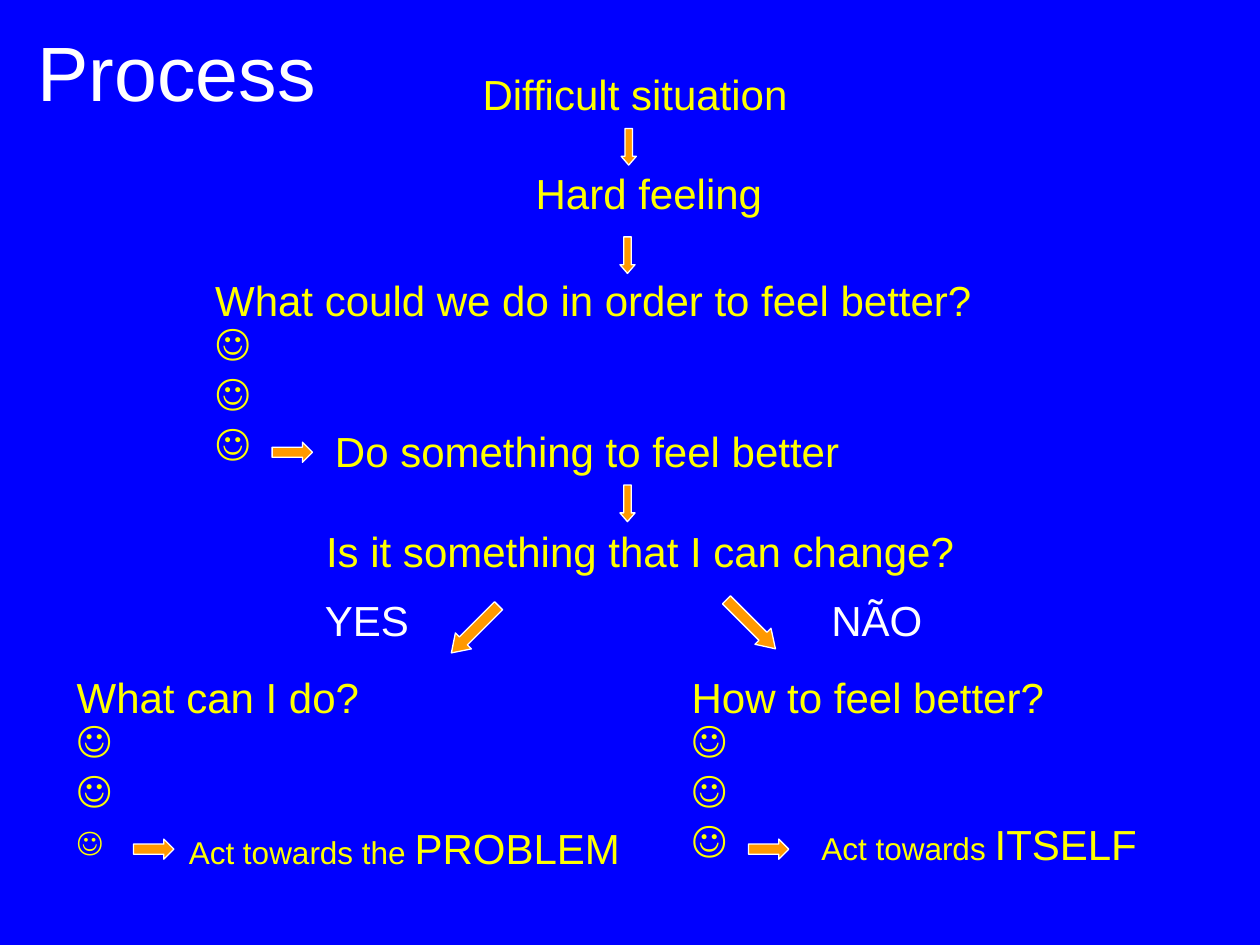
from pptx import Presentation
from pptx.dml.color import RGBColor
from pptx.enum import shapes, text
from pptx.oxml.ns import qn
from pptx.util import Inches, Pt

BLUE, YELLOW, WHITE, ORANGE = "0000FF", "FFFF00", "FFFFFF", "FF9900"
SMILEY = "☺"
LEFT, CENTER = text.PP_ALIGN.LEFT, text.PP_ALIGN.CENTER
DOWN, RIGHT = shapes.MSO_SHAPE.DOWN_ARROW, shapes.MSO_SHAPE.RIGHT_ARROW

LABELS = [
    ("Process", 0.2, 0.21, 9.14, 0.71, LEFT, WHITE, 44),
    ("Difficult situation", 2.33, 0.49, 5.42, 0.5, CENTER, YELLOW, 24),
    ("Hard feeling", 2.16, 1.28, 5.98, 0.5, CENTER, YELLOW, 24),
    ("Do something to feel better", 2.56, 3.33, 7.09, 0.5, LEFT, YELLOW, 24),
    ("Is it something that I can change?", 2.09, 4.12, 5.98, 0.5, CENTER, YELLOW, 24),
    ("YES", 2.48, 4.67, 1.02, 0.5, LEFT, WHITE, 24),
    ("NÃO", 6.5, 4.67, 1.1, 0.5, LEFT, WHITE, 24),
]
QUESTIONS = [
    ("What could we do in order to feel better?", 1.61, 2.13, 7.64, []),
    ("What can I do?", 0.51, 5.28, 4.88, [("Act towards the ", 18), ("PROBLEM", 24)]),
    ("How to feel better?", 5.39, 5.28, 4.09, []),
]
ITSELF = [("Act towards ", 18), ("ITSELF", 24)]
STEP_ARROWS = [(4.93, 1.02), (4.92, 1.88), (4.92, 3.85)]
BRANCH_ARROWS = [(5.87, 4.68, 0.55, 315, 0.78), (3.68, 4.73, 0.53, 45, 0.75)]


def color(value):
    return RGBColor.from_string(value)


def add_box(left, top, width, height):
    box = page.shapes.add_textbox(*map(Inches, (left, top, width, height)))
    box.text_frame.word_wrap = True
    box.text_frame.vertical_anchor = text.MSO_ANCHOR.MIDDLE
    return box.text_frame


def style(para, size=24, tint=YELLOW, align=LEFT):
    para.alignment = align
    para.font.name = "Arial"
    para.font.size = Pt(size)
    para.font.color.rgb = color(tint)


def add_spans(para, spans):
    style(para)
    for words, size in spans:
        span = para.add_run()
        span.text = words
        span.font.name = "Arial"
        span.font.size = Pt(size)
        span.font.color.rgb = color(YELLOW)


def add_bullet(para, indent):
    props = para._p.get_or_add_pPr()
    props.set("marL", str(Inches(indent)))
    props.set("indent", str(-Inches(indent)))
    bullet = props.makeelement(qn("a:buChar"), {"char": SMILEY})
    props.insert_element_before(bullet, "a:tabLst", "a:defRPr", "a:extLst")


def add_question(heading, left, top, width, answer):
    frame = add_box(left, top, width, 1.72)
    frame.vertical_anchor = text.MSO_ANCHOR.TOP
    frame.text = heading
    style(frame.paragraphs[0])
    for spans in ([], [], answer):
        para = frame.add_paragraph()
        add_spans(para, spans or [(" ", 24)])
        add_bullet(para, 0.89)


def add_arrow(kind, left, top, width, height, head, rotation=0):
    arrow = page.shapes.add_shape(kind, *map(Inches, (left, top, width, height)))
    arrow.adjustments[0], arrow.adjustments[1] = 0.5, head
    arrow.rotation = rotation
    arrow.shadow.inherit = False
    arrow.fill.solid()
    arrow.fill.fore_color.rgb = color(ORANGE)
    arrow.line.color.rgb = color(WHITE)
    arrow.line.width = Pt(0.75)


deck = Presentation()
deck.slide_width, deck.slide_height = Inches(10), Inches(7.5)
page = deck.slides.add_slide(deck.slide_layouts[6])
page.background.fill.solid()
page.background.fill.fore_color.rgb = color(BLUE)

for words, left, top, width, height, align, tint, size in LABELS:
    frame = add_box(left, top, width, height)
    frame.text = words
    style(frame.paragraphs[0], size, tint, align)

for heading, left, top, width, answer in QUESTIONS:
    add_question(heading, left, top, width, answer)
    add_arrow(RIGHT, left + 0.55, top + 1.38, 0.32, 0.16, 0.5)

add_spans(add_box(6.42, 6.45, 3.42, 0.5).paragraphs[0], ITSELF)

for left, top in STEP_ARROWS:
    add_arrow(DOWN, left, top, 0.12, 0.29, 0.58)
for left, top, height, rotation, head in BRANCH_ARROWS:
    add_arrow(DOWN, left, top, 0.18, height, head, rotation)

deck.save("out.pptx")
